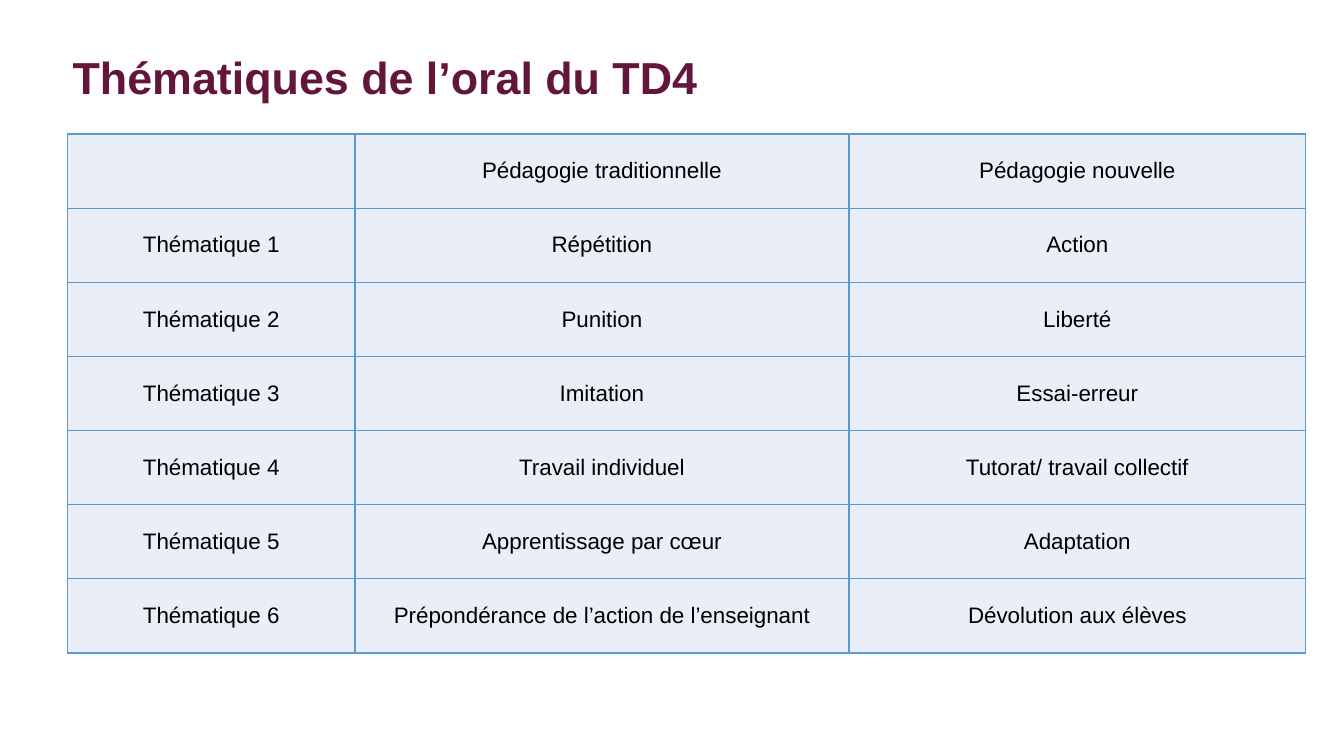
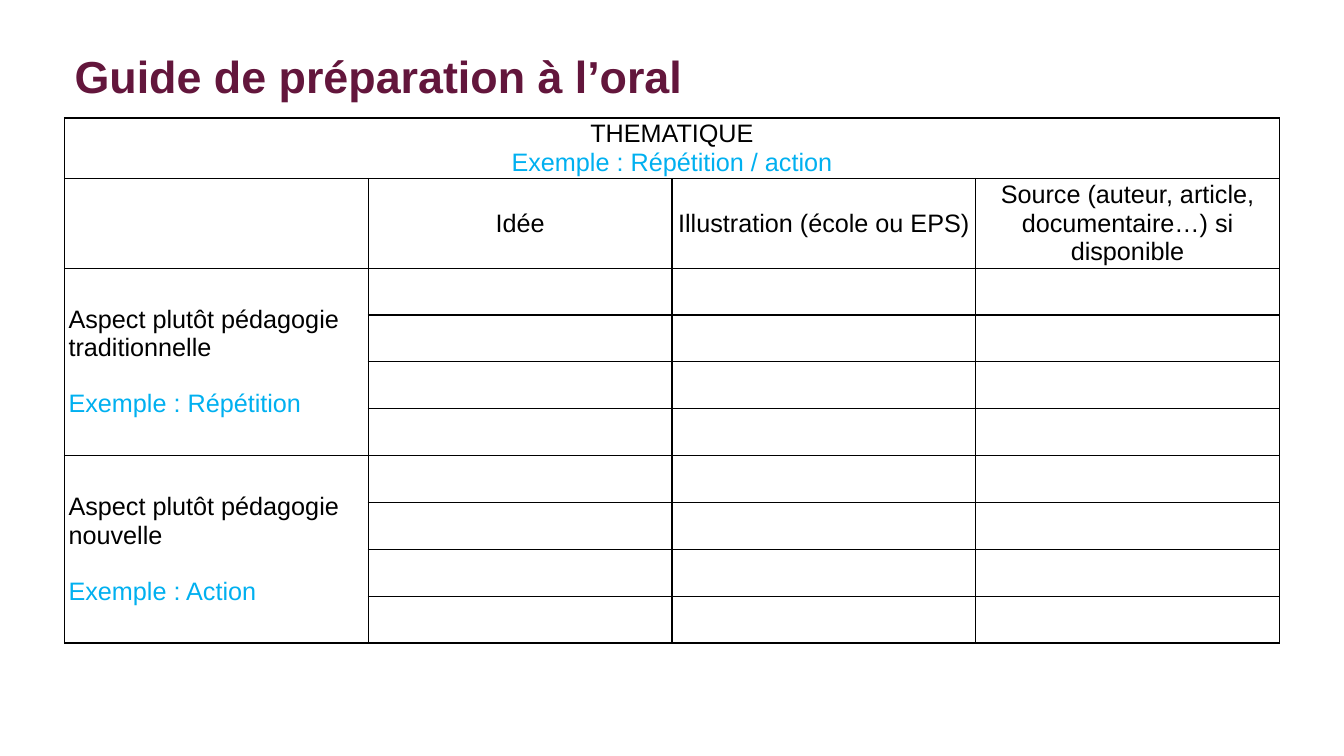
from pptx import Presentation
from pptx.dml.color import RGBColor
from pptx.enum.text import MSO_ANCHOR as Anchor, PP_ALIGN as Align
from pptx.oxml import parse_xml
from pptx.oxml.ns import nsdecls
from pptx.util import Inches, Pt

FONT = "Arial"
PLUM = RGBColor(0x63, 0x16, 0x3C)
BLACK = RGBColor(0, 0, 0)
CYAN = RGBColor(0x00, 0xB0, 0xF0)
BLUE = RGBColor(0x5B, 0x9B, 0xD5)
PALE = RGBColor(0xEA, 0xEF, 0xF7)

THEMES = [
    ("", "Pédagogie traditionnelle", "Pédagogie nouvelle"),
    ("Thématique 1", "Répétition", "Action"),
    ("Thématique 2", "Punition", "Liberté"),
    ("Thématique 3", "Imitation", "Essai-erreur"),
    ("Thématique 4", "Travail individuel", "Tutorat/ travail collectif"),
    ("Thématique 5", "Apprentissage par cœur", "Adaptation"),
    ("Thématique 6", "Prépondérance de l’action de l’enseignant",
     "Dévolution aux élèves"),
]

TOPIC = ("THEMATIQUE", "Exemple : Répétition / action")
HEADS = ["", "Idée", "Illustration (école ou EPS)",
         "Source (auteur, article, documentaire…) si disponible"]
ASPECTS = [
    ("Aspect plutôt pédagogie traditionnelle", "Exemple : Répétition"),
    ("Aspect plutôt pédagogie nouvelle", "Exemple : Action"),
]
LINES = 4  # writing rows for each aspect


def add_slide(prs, title, left, top):
    slide = prs.slides.add_slide(prs.slide_layouts[5])
    box = slide.shapes.title
    box.left, box.top = Inches(left), Inches(top)
    box.width, box.height = Inches(9.58), Inches(0.77)
    frame = box.text_frame
    frame.text = title
    frame.vertical_anchor = Anchor.MIDDLE
    para = frame.paragraphs[0]
    para.alignment = Align.LEFT
    para.line_spacing = 0.9
    style(para, 32, PLUM, True)
    return slide


def style(para, size, color, bold=False):
    font = para.font
    font.name, font.size, font.bold = FONT, Pt(size), bold
    font.color.rgb = color


def add_grid(slide, left, top, cols, rows, line, pad, fill=None):
    """Add an empty table with even borders; pad is (side, top) margins."""
    table = slide.shapes.add_table(
        len(rows), len(cols), Inches(left), Inches(top),
        Inches(sum(cols)), Inches(sum(rows))).table
    table.first_row = table.horz_banding = False
    for col, width in zip(table.columns, cols):
        col.width = Inches(width)
    for row, height in zip(table.rows, rows):
        row.height = Inches(height)
    for cell in table.iter_cells():
        cell.margin_left = cell.margin_right = Inches(pad[0])
        cell.margin_top = cell.margin_bottom = Inches(pad[1])
        cell.vertical_anchor = Anchor.MIDDLE
        props = cell._tc.get_or_add_tcPr()
        for side in "LRTB":
            props.append(parse_xml(
                f'<a:ln{side} {nsdecls("a")} w="12700"><a:solidFill>'
                f'<a:srgbClr val="{line}"/></a:solidFill></a:ln{side}>'))
        if fill is None:
            cell.fill.background()
        else:
            cell.fill.solid()
            cell.fill.fore_color.rgb = fill
    return table


def write(cell, size, text, example=None, align=Align.CENTER, gap=0):
    """Fill a cell; the example goes below the text, in cyan."""
    para = cell.text_frame.paragraphs[0]
    para.text = text
    para.alignment = align
    style(para, size, BLACK)
    if example:
        para = cell.text_frame.add_paragraph()
        para.text = example
        para.alignment = align
        para.space_before = Pt(gap)
        style(para, size, CYAN)


def add_themes(prs):
    slide = add_slide(prs, "Thématiques de l’oral du TD4", 0.62, 0.41)
    table = add_grid(slide, 0.67, 1.33, [2.85, 4.9, 4.53],
                     [5.15 / len(THEMES)] * len(THEMES),
                     BLUE, (0.06, 0.03), PALE)
    for r, row in enumerate(THEMES):
        for c, text in enumerate(row):
            write(table.cell(r, c), 16, text)


def add_guide(prs):
    slide = add_slide(prs, "Guide de préparation à l’oral", 0.64, 0.4)
    rows = [0.6, 0.89] + [0.465] * (LINES * len(ASPECTS))
    table = add_grid(slide, 0.64, 1.17, [12.05 / len(HEADS)] * len(HEADS),
                     rows, BLACK, (0.04, 0.02))
    table.cell(0, 0).merge(table.cell(0, len(HEADS) - 1))
    write(table.cell(0, 0), 18, *TOPIC)
    for c, head in enumerate(HEADS):
        write(table.cell(1, c), 18, head)
    for i, aspect in enumerate(ASPECTS):
        first = 2 + i * LINES
        cell = table.cell(first, 0)
        cell.merge(table.cell(first + LINES - 1, 0))
        write(cell, 18, *aspect, align=Align.LEFT, gap=20)


def main():
    prs = Presentation()
    prs.slide_width, prs.slide_height = Inches(13.33), Inches(7.5)
    add_themes(prs)
    add_guide(prs)
    prs.save("out.pptx")


if __name__ == "__main__":
    main()
